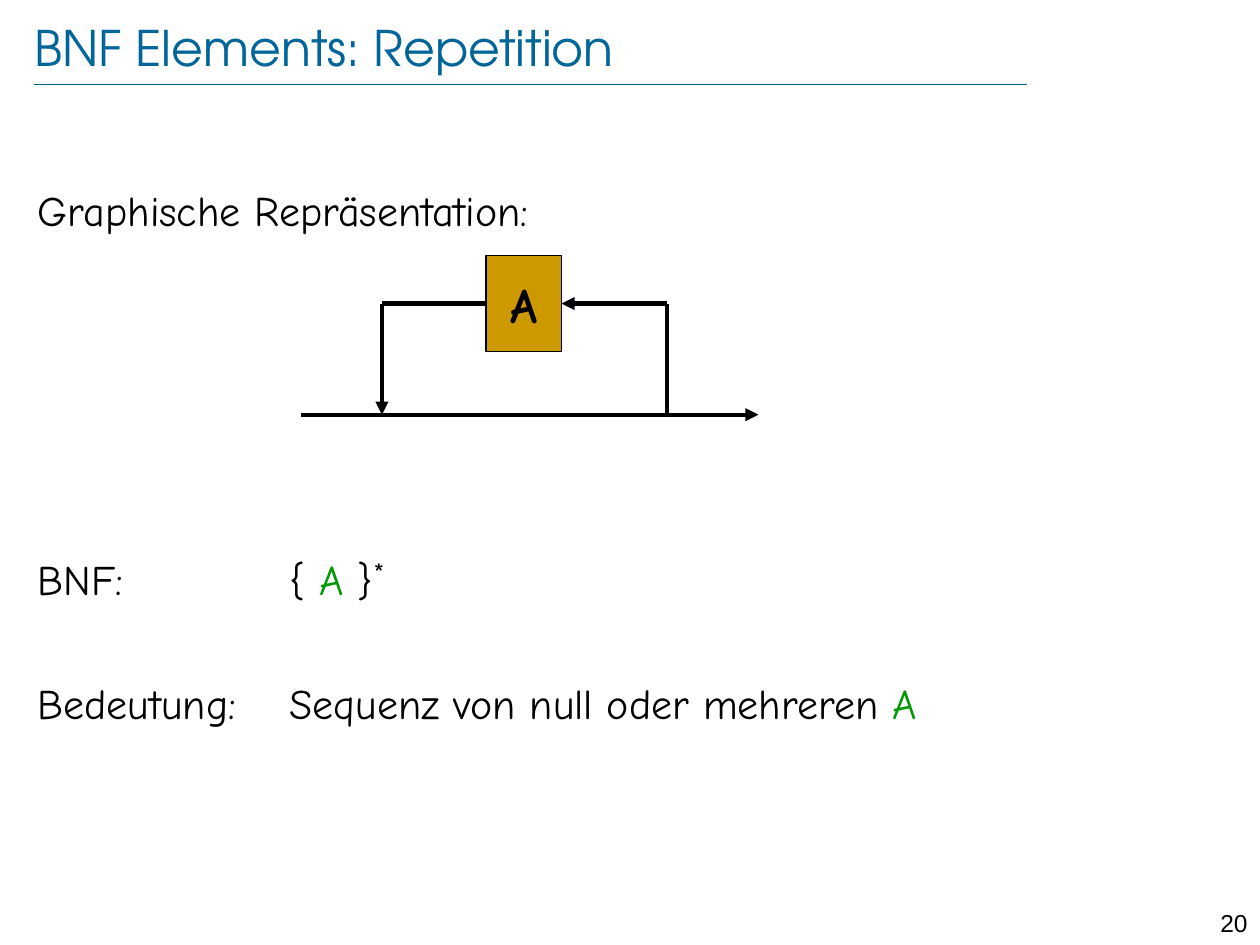
from lxml import etree
from pptx import Presentation
from pptx import util as u
from pptx.dml.color import RGBColor
from pptx.enum import shapes, text
from pptx.oxml.ns import qn

BLUE = RGBColor(0x00, 0x66, 0x99)
BLACK = RGBColor(0x00, 0x00, 0x00)
GREEN = RGBColor(0x00, 0x99, 0x00)
OCHRE = RGBColor(0xCC, 0x99, 0x00)
BODY_FONT = "Comic Neue"

presentation = Presentation()
presentation.slide_width = u.Cm(25.4)
presentation.slide_height = u.Cm(19.05)
slide = presentation.slides.add_slide(presentation.slide_layouts[6])


def add_run(paragraph, words, color, **formats):
    run = paragraph.add_run()
    run.text = words
    run.font.color.rgb = color
    for name, value in formats.items():
        setattr(run.font, name, value)
    return run


def add_line(start, end, color, width, arrow=False):
    points = [u.Cm(value) for value in (*start, *end)]
    line = slide.shapes.add_connector(shapes.MSO_CONNECTOR.STRAIGHT, *points)
    line.line.color.rgb = color
    line.line.width = u.Pt(width)
    if arrow:
        etree.SubElement(line.line._get_or_add_ln(), qn("a:tailEnd"), type="triangle")
    etree.SubElement(line._element.spPr, qn("a:effectLst"))
    return line


# Title with its rule
add_line((0.69, 1.7), (20.7, 1.7), BLUE, 0.25)
title = slide.shapes.add_textbox(u.Cm(0.69), u.Cm(0.33), u.Cm(22.07), u.Cm(1.22))
title_format = {"margin_left": 0, "margin_right": 0, "margin_top": 0, "margin_bottom": 0,
                "word_wrap": True, "vertical_anchor": text.MSO_ANCHOR.MIDDLE}
for name, value in title_format.items():
    setattr(title.text_frame, name, value)
add_run(title.text_frame.paragraphs[0], "BNF Elements: Repetition", BLUE,
        size=u.Pt(28), name="TeX Gyre Adventor")

# Body: space before in points, then the runs of each paragraph
body_rows = [
    (0, [("Graphische Repräsentation:", BLACK)]),
    (178, [("BNF:\t{ ", BLACK), ("A ", GREEN), ("}", BLACK), ("*", BLACK)]),
    (41, [("Bedeutung:\tSequenz von null oder mehreren ", BLACK), ("A", GREEN)]),
]
body = slide.shapes.add_textbox(u.Cm(0.51), u.Cm(3.6), u.Cm(24.2), u.Cm(13.9))
body.text_frame.word_wrap = True
for index, (space, runs) in enumerate(body_rows):
    paragraph = body.text_frame.paragraphs[0] if index == 0 else body.text_frame.add_paragraph()
    paragraph.space_before = u.Pt(space)
    tabs = etree.SubElement(paragraph._p.get_or_add_pPr(), qn("a:tabLst"))
    etree.SubElement(tabs, qn("a:tab"), pos=str(u.Cm(5.08)), algn="l")
    for words, color in runs:
        star = words == "*"
        run = add_run(paragraph, words, color, size=u.Pt(28 if star else 24), name=BODY_FONT)
        if star:
            run._r.get_or_add_rPr().set("baseline", "24000")

# Syntax diagram: box A
box = slide.shapes.add_shape(shapes.MSO_SHAPE.RECTANGLE,
                             u.Cm(9.8), u.Cm(5.15), u.Cm(1.52), u.Cm(1.94))
box.shadow.inherit = False
box.fill.solid()
box.fill.fore_color.rgb = OCHRE
box.line.color.rgb = BLACK
box.line.width = u.Pt(0.75)
box.text_frame.word_wrap = False
box.text_frame.vertical_anchor = text.MSO_ANCHOR.MIDDLE
box_paragraph = box.text_frame.paragraphs[0]
box_paragraph.alignment = text.PP_ALIGN.CENTER
add_run(box_paragraph, "A", BLACK, size=u.Pt(28), name=BODY_FONT, bold=True)

# Syntax diagram: main track and the loop back through the box
START, LEFT, RIGHT, END = 6.07, 7.7, 13.44, 15.29
LOOP, TRACK = 6.12, 8.36
for start, end, arrow in [
    ((START, TRACK), (LEFT, TRACK), False),
    ((LEFT, TRACK), (RIGHT, TRACK), False),
    ((RIGHT, TRACK), (END, TRACK), True),
    ((RIGHT, TRACK), (RIGHT, LOOP), False),
    ((LEFT, LOOP), (LEFT, TRACK), True),
]:
    add_line(start, end, BLACK, 2.5, arrow)
into_box = add_line((RIGHT, LOOP), (11.32, LOOP), BLACK, 2.5, arrow=True)
into_box.end_connect(box, 3)
out_of_box = add_line((9.8, LOOP), (LEFT, LOOP), BLACK, 2.5)
out_of_box.begin_connect(box, 1)

# Slide number
number = slide.shapes.add_textbox(u.Cm(24), u.Cm(18.19), u.Cm(1.4), u.Cm(0.61))
number.text_frame.word_wrap = True
number_paragraph = number.text_frame.paragraphs[0]
number_paragraph.alignment = text.PP_ALIGN.RIGHT
add_run(number_paragraph, "20", BLACK, size=u.Pt(14), name="Arial")

presentation.save("out.pptx")
